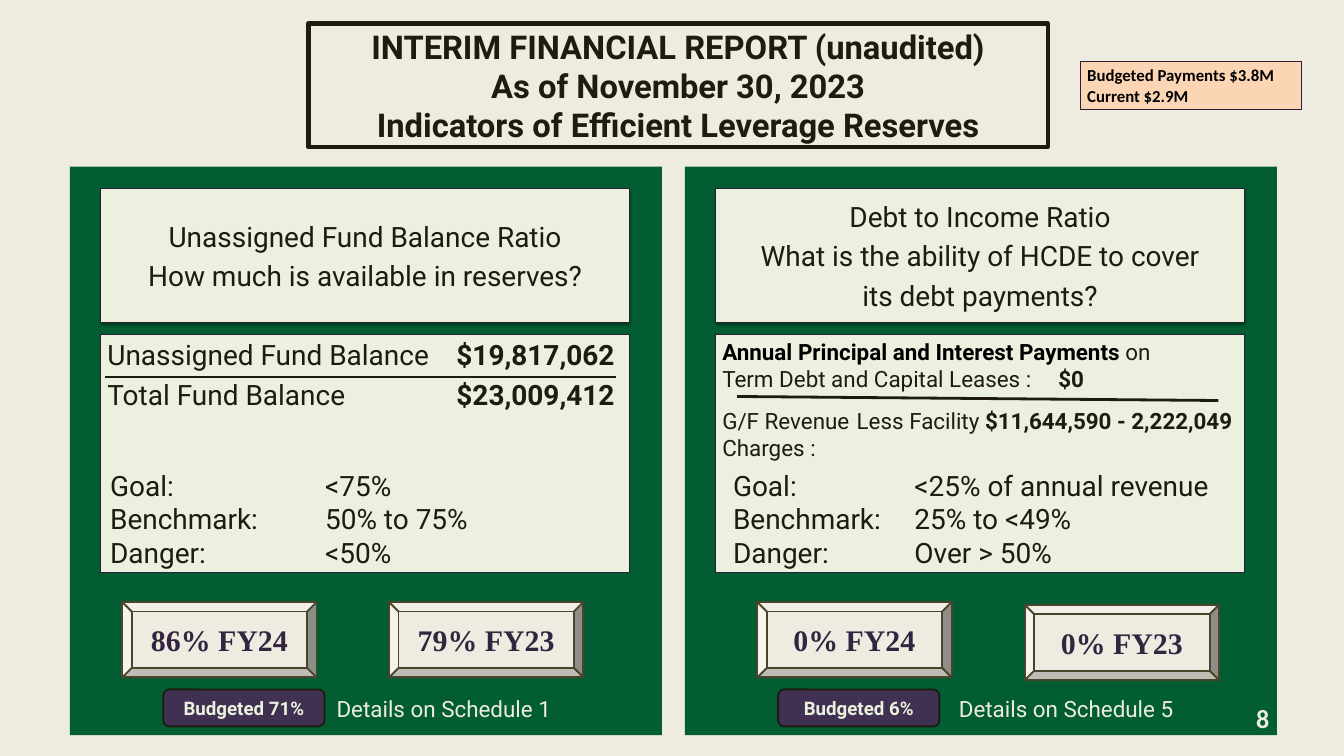
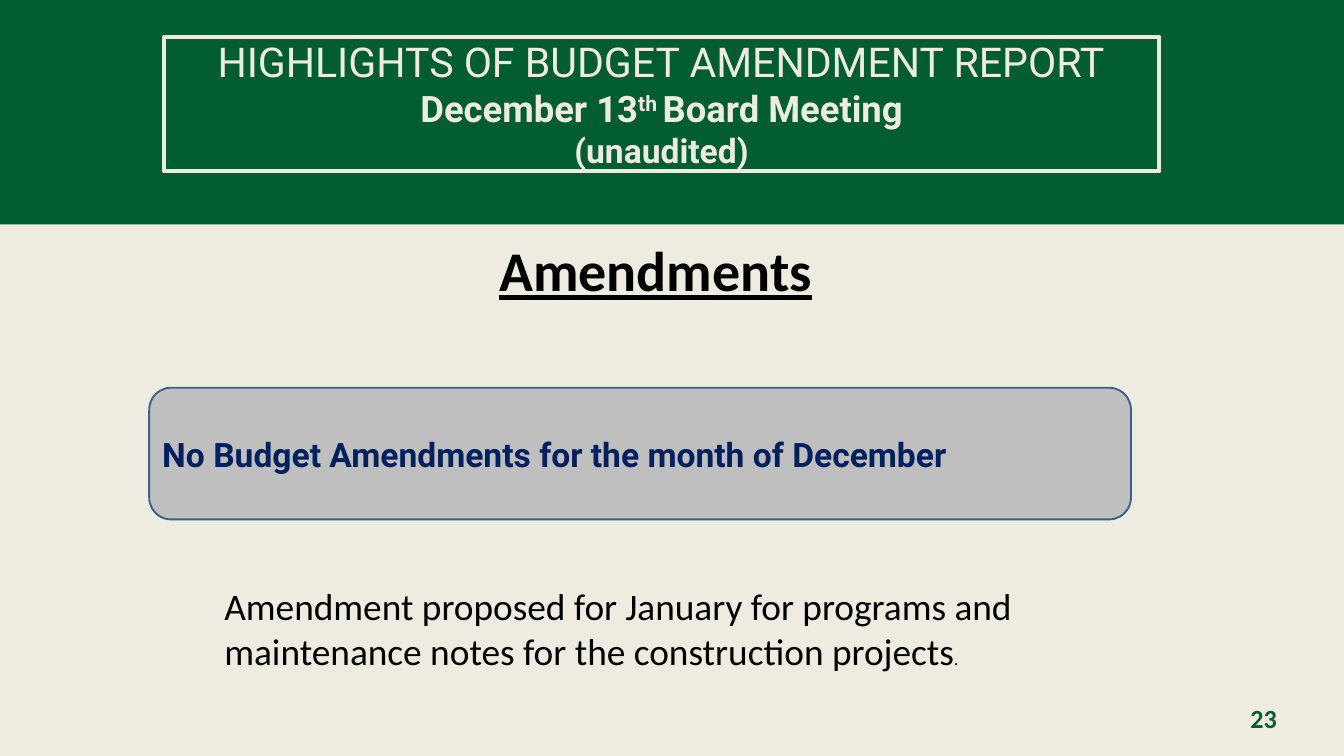
from dataclasses import dataclass

from lxml.etree import SubElement
from pptx import Presentation
from pptx.dml.color import RGBColor
from pptx.enum.shapes import MSO_CONNECTOR as Connector, MSO_SHAPE as Shape
from pptx.enum.text import MSO_ANCHOR as Anchor, PP_ALIGN as Align
from pptx.oxml.ns import qn
from pptx.util import Inches, Pt


@dataclass(frozen=True)
class Theme:
    cream: str = "EEECE1"
    green: str = "025E32"
    ink: str = "1E1C11"
    black: str = "000000"
    card: str = "EBF1DE"
    card_line: str = "291F35"
    bevel_line: str = "4A452A"
    badge_text: str = "332440"
    pill: str = "403152"
    peach: str = "FCD5B5"
    grey: str = "BFBFBF"
    blue_line: str = "3A5F8C"
    navy: str = "002060"
    sans: str = "Roboto"
    plain: str = "Calibri"
    serif: str = "Times New Roman"
    title: float = 35.1
    body: float = 30
    detail: float = 24
    badge: float = 32
    pill_size: float = 20
    note: float = 18
    page: float = 28


THEME = Theme()
BOLD = {"bold": True}


def format_run(run, size, color, font=THEME.sans, bold=False, underline=False, baseline=0):
    run.font.size = Pt(size)
    run.font.name = font
    run.font.bold = bold
    run.font.underline = underline
    run.font.color.rgb = RGBColor.from_string(color)
    if baseline:
        run._r.get_or_add_rPr().set("baseline", str(baseline * 1000))


def set_tab(paragraph, position, align="l"):
    tabs = SubElement(paragraph._p.get_or_add_pPr(), qn("a:tabLst"))
    SubElement(tabs, qn("a:tab"), pos=str(Inches(position)), algn=align)


def write(shape, lines, style, align=Align.LEFT, anchor=Anchor.TOP, inset=None, before=0):
    frame = shape.text_frame
    frame.word_wrap = True
    frame.vertical_anchor = anchor
    if inset is not None:
        frame.margin_left = frame.margin_right = Inches(inset)
        frame.margin_top = frame.margin_bottom = Inches(inset)
    for index, line in enumerate(lines):
        paragraph = frame.add_paragraph() if index else frame.paragraphs[0]
        paragraph.alignment = align
        paragraph.space_before = Pt(before)
        for text, changes in [(line, {})] if isinstance(line, str) else line:
            run = paragraph.add_run()
            run.text = text
            format_run(run, **{**style, **changes})
    return frame.paragraphs


def add_box(slide, kind, place, fill=None, line=None, width=0.75):
    shape = slide.shapes.add_shape(kind, *map(Inches, place))
    shape.shadow.inherit = False
    if fill:
        shape.fill.solid()
        shape.fill.fore_color.rgb = RGBColor.from_string(fill)
    else:
        shape.fill.background()
    if line:
        shape.line.color.rgb = RGBColor.from_string(line)
        shape.line.width = Pt(width)
    else:
        shape.line.fill.background()
    return shape


def add_text(slide, place, lines, style, **layout):
    box = slide.shapes.add_textbox(*map(Inches, place))
    return write(box, lines, style, **layout)


def add_card_shadow(shape):
    effects = shape._element.spPr.find(qn("a:effectLst"))
    shadow = SubElement(effects, qn("a:outerShdw"), blurRad=str(Pt(3.1)),
                        dist=str(Pt(1.8)), dir="5400000", rotWithShape="0")
    color = SubElement(shadow, qn("a:srgbClr"), val=THEME.black)
    SubElement(color, qn("a:alpha"), val="35000")


def add_rule(slide, start, end):
    rule = slide.shapes.add_connector(Connector.STRAIGHT, *map(Inches, start + end))
    rule.line.color.rgb = RGBColor.from_string(THEME.ink)
    rule.line.width = Pt(3)
    SubElement(rule._element.spPr, qn("a:effectLst"))


def add_page_number(slide, left, number, color):
    add_text(slide, (left, 10.45, 0.42, 0.47), [number],
             dict(size=THEME.page, color=color, font=THEME.plain, bold=True),
             align=Align.RIGHT, inset=0)


def add_title(slide, place, lines, style, color, anchor):
    frame = add_box(slide, Shape.RECTANGLE, place, line=color, width=4.5)
    write(frame, lines, dict(color=color, **style), align=Align.CENTER, anchor=anchor, inset=0)


def add_badge(slide, left, top, text):
    badge = add_box(slide, Shape.BEVEL, (left, top, 2.89, 1.12), THEME.cream, THEME.bevel_line, 2)
    write(badge, [text], dict(size=THEME.badge, color=THEME.badge_text, font=THEME.serif, bold=True),
          align=Align.CENTER, anchor=Anchor.MIDDLE)


def add_ratio_panel(slide, left, heading, formula, formula_size, formula_before):
    body = dict(size=THEME.body, color=THEME.ink)
    add_box(slide, Shape.RECTANGLE, (left, 2.48, 8.81, 8.46), THEME.green)
    header = add_box(slide, Shape.RECTANGLE, (left + 0.46, 2.81, 7.87, 1.99),
                     THEME.card, THEME.card_line)
    add_card_shadow(header)
    write(header, heading, body, align=Align.CENTER, anchor=Anchor.MIDDLE, before=6)
    card = add_box(slide, Shape.RECTANGLE, (left + 0.46, 4.98, 7.87, 3.54),
                   THEME.card, THEME.card_line)
    return write(card, formula, dict(size=formula_size, color=THEME.ink), before=formula_before)


def add_thresholds(slide, left, tab, values):
    labels = ("Goal:", "Benchmark:", "Danger:")
    lines = [f"{label}\t{value}" for label, value in zip(labels, values)]
    for paragraph in add_text(slide, (left, 6.92, 7.8, 1.62), lines,
                              dict(size=THEME.body, color=THEME.ink)):
        set_tab(paragraph, tab)


def add_budget_line(slide, left, budget, details_left, details):
    pill = add_box(slide, Shape.ROUNDED_RECTANGLE, (left, 10.26, 2.4, 0.55),
                   THEME.pill, THEME.ink, 2)
    write(pill, [budget], dict(size=THEME.pill_size, color=THEME.card, bold=True),
          align=Align.CENTER, anchor=Anchor.MIDDLE)
    add_text(slide, (details_left, 10.29, 3.8, 0.5), [details],
             dict(size=THEME.detail, color=THEME.cream))


def add_slide(presentation):
    slide = presentation.slides.add_slide(presentation.slide_layouts[6])
    slide.background.fill.solid()
    slide.background.fill.fore_color.rgb = RGBColor.from_string(THEME.cream)
    return slide


def build_reserves(presentation):
    slide = add_slide(presentation)
    add_title(slide, (4.59, 0.35, 11, 1.84),
              ["INTERIM FINANCIAL REPORT (unaudited)", "As of November 30, 2023",
               "Indicators of Efficient Leverage Reserves"],
              dict(size=THEME.title, bold=True), THEME.ink, Anchor.MIDDLE)

    balances = add_ratio_panel(
        slide, 1.04, ["Unassigned Fund Balance Ratio", "How much is available in reserves?"],
        [[("Unassigned Fund Balance\t", {}), ("$19,817,062", BOLD)],
         [("Total Fund Balance\t", {}), ("$23,009,412", BOLD)]], THEME.body, 6)
    for paragraph in balances:
        set_tab(paragraph, 7.55, "r")
    add_rule(slide, (1.57, 5.61), (9.16, 5.61))
    add_thresholds(slide, 1.54, 3.2, ("<75%", "50% to 75%", "<50%"))

    debts = add_ratio_panel(
        slide, 10.19, ["Debt to Income Ratio", "What is the ability of HCDE to cover",
                       "its debt payments?"],
        [[("Annual Principal and Interest Payments ", dict(color=THEME.black, bold=True)), ("on", {})],
         [("Term Debt and Capital Leases :\t", {}), ("$0", BOLD)],
         [("G/F Revenue\tLess Facility ", {}), ("$11,644,590 - 2,222,049", BOLD)],
         "Charges :"], THEME.detail, 0)
    set_tab(debts[1], 5)
    set_tab(debts[2], 2)
    debts[2].space_before = Pt(16.5)
    add_rule(slide, (10.97, 5.9), (18.13, 5.96))
    add_thresholds(slide, 10.81, 2.7, ("<25% of annual revenue", "25% to <49%", "Over > 50%"))

    for left, top, text in ((1.82, 8.96, "86% FY24"), (5.79, 8.96, "79% FY23"),
                            (11.27, 8.96, "0% FY24"), (15.25, 9, "0% FY23")):
        add_badge(slide, left, top, text)
    add_budget_line(slide, 2.43, "Budgeted 71%", 4.91, "Details on Schedule 1")
    add_budget_line(slide, 11.58, "Budgeted 6%", 14.17, "Details on Schedule 5")
    add_page_number(slide, 18.47, "8", THEME.cream)

    payments = add_box(slide, Shape.RECTANGLE, (16.08, 0.92, 3.29, 0.71),
                       THEME.peach, THEME.card_line)
    write(payments, ["Budgeted Payments $3.8M", "Current $2.9M"],
          dict(size=THEME.note, color=THEME.black, font=THEME.plain, bold=True))


def build_amendments(presentation):
    slide = add_slide(presentation)
    add_box(slide, Shape.RECTANGLE, (0, 0, 20, 3.34), THEME.green)
    meeting = dict(size=39, bold=True)
    add_title(slide, (2.44, 0.55, 14.81, 2),
              ["HIGHLIGHTS OF BUDGET AMENDMENT REPORT",
               [("December 13", meeting), ("th ", dict(baseline=30, **meeting)),
                ("Board Meeting", meeting)],
               [("(unaudited)", dict(size=36, bold=True))]],
              dict(size=44), THEME.cream, Anchor.TOP)
    add_text(slide, (7.33, 3.46, 4.9, 1.11), ["Amendments"],
             dict(size=60, color=THEME.black, font=THEME.plain, bold=True, underline=True))
    add_page_number(slide, 18.58, "23", THEME.green)
    notice = add_box(slide, Shape.ROUNDED_RECTANGLE, (2.22, 5.77, 14.61, 1.96),
                     THEME.grey, THEME.blue_line, 2)
    write(notice, ["No Budget Amendments for the month of December"],
          dict(size=36, color=THEME.navy, bold=True), anchor=Anchor.MIDDLE)
    add_text(slide, (3.24, 8.63, 12.58, 1.45),
             [[("Amendment proposed for January for programs and maintenance notes "
                "for the construction projects", {}), (".", dict(size=THEME.note))]],
             dict(size=40, color=THEME.black, font=THEME.plain))


def main():
    presentation = Presentation()
    presentation.slide_width = Inches(20)
    presentation.slide_height = Inches(11.25)
    build_reserves(presentation)
    build_amendments(presentation)
    presentation.save("out.pptx")


if __name__ == "__main__":
    main()
